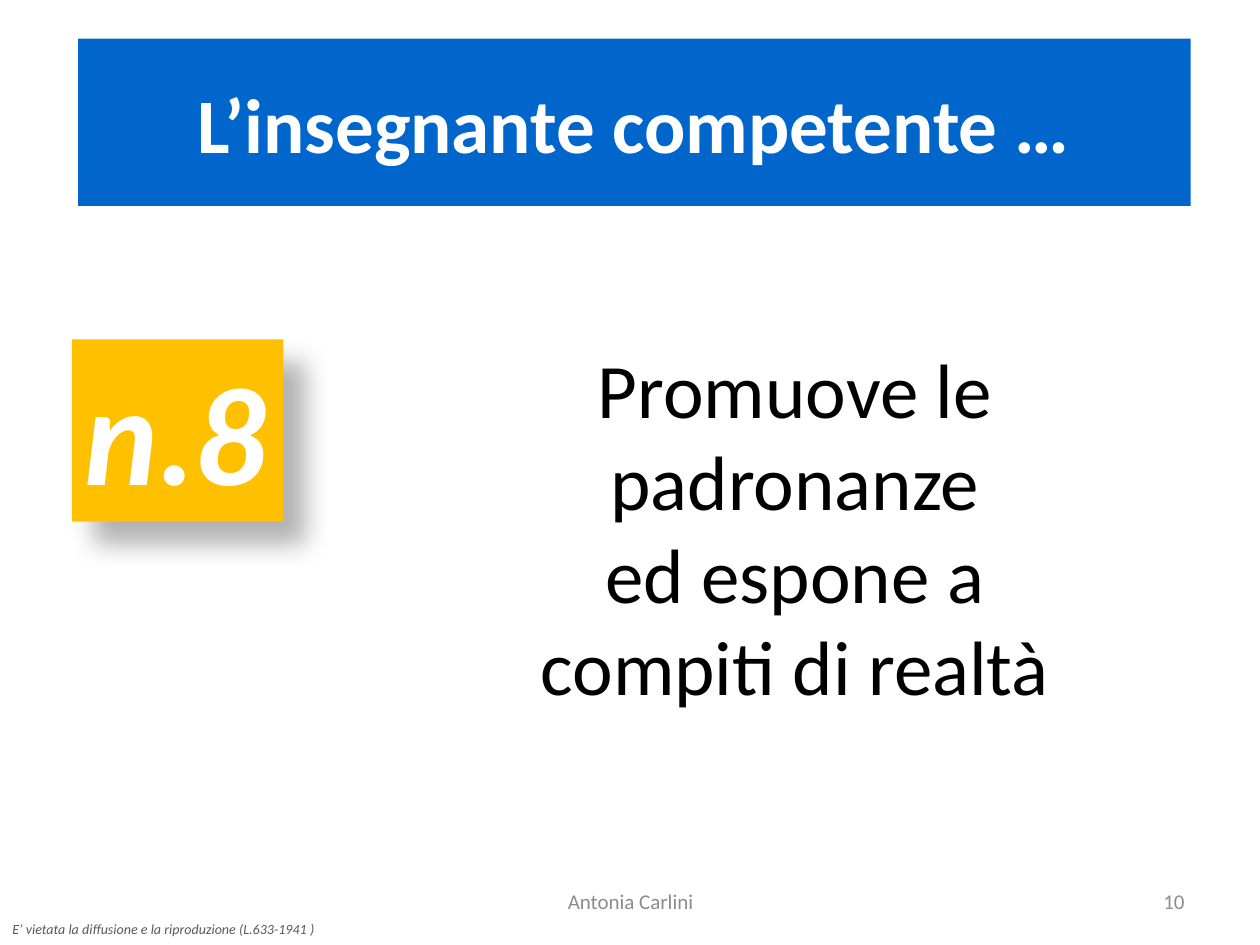
from lxml.etree import SubElement
from pptx import Presentation
from pptx.dml.color import RGBColor
from pptx.enum.shapes import MSO_SHAPE as Form
from pptx.enum.text import MSO_ANCHOR as Anchor, MSO_AUTO_SIZE as Fit, PP_ALIGN as Align
from pptx.oxml.ns import qn
from pptx.util import Inches, Pt

WHITE = RGBColor(0xFF, 0xFF, 0xFF)
BLACK = RGBColor(0x00, 0x00, 0x00)
BLUE = RGBColor(0x00, 0x66, 0xCC)
GOLD = RGBColor(0xFF, 0xC0, 0x00)
GREY = RGBColor(0x8C, 0x8C, 0x8C)
DARK = RGBColor(0x59, 0x59, 0x59)


class Deck:
    font = "Calibri"

    def __init__(self, wide, high):
        self.prs = Presentation()
        self.prs.slide_width = self.wide = Inches(wide)
        self.prs.slide_height = self.high = Inches(high)
        self.slide = self.prs.slides.add_slide(self.prs.slide_layouts[6])

    def area(self, x, y, w, h):
        return (round(x * self.wide / 100), round(y * self.high / 100),
                round(w * self.wide / 100), round(h * self.high / 100))

    def label(self, shape, lines, size, color, align=Align.LEFT, anchor=Anchor.TOP,
              bold=False, italic=False, wrap=True, grow=False):
        frame = shape.text_frame
        frame.word_wrap = wrap
        frame.vertical_anchor = anchor
        frame.auto_size = Fit.SHAPE_TO_FIT_TEXT if grow else Fit.NONE
        for i, line in enumerate(lines):
            para = frame.add_paragraph() if i else frame.paragraphs[0]
            para.alignment = align
            run = para.add_run()
            run.text = line
            font = run.font
            font.name, font.size = self.font, Pt(size)
            font.bold, font.italic = bold, italic
            font.color.rgb = color

    def text(self, area, lines, size, color, **style):
        box = self.slide.shapes.add_textbox(*self.area(*area))
        self.label(box, lines, size, color, **style)

    def block(self, area, fill, lines, size, color, **style):
        rect = self.slide.shapes.add_shape(Form.RECTANGLE, *self.area(*area))
        rect.shadow.inherit = False
        rect.fill.solid()
        rect.fill.fore_color.rgb = fill
        rect.line.fill.background()
        self.label(rect, lines, size, color, **style)
        return rect

    def shade(self, shape, color, alpha, blur, dist, angle):
        effects = shape.element.spPr.find(qn("a:effectLst"))
        outer = SubElement(effects, qn("a:outerShdw"), blurRad=str(Pt(blur)),
                           dist=str(Pt(dist)), dir=str(angle * 60000),
                           algn="tl", rotWithShape="0")
        tint = SubElement(outer, qn("a:srgbClr"), val=str(color))
        SubElement(tint, qn("a:alpha"), val=str(alpha * 1000))

    def save(self):
        self.prs.save("out.pptx")


def main():
    deck = Deck(10, 7.5)
    deck.text((0, 96.8, 26.4, 3.2),
              ["E’ vietata la diffusione e la riproduzione (L.633-1941 )"],
              8, DARK, italic=True, grow=True)
    deck.text((71.7, 92.7, 23.3, 5.3), ["10"], 12, GREY,
              align=Align.RIGHT, anchor=Anchor.MIDDLE)
    deck.text((34.2, 92.7, 31.7, 5.3), ["Antonia Carlini"], 12, GREY,
              align=Align.CENTER, anchor=Anchor.MIDDLE)
    deck.text((32.7, 35.5, 60.8, 40.8),
              ["Promuove le padronanze", "ed espone a", "compiti di realtà"],
              44, BLACK, align=Align.CENTER, grow=True)
    badge = deck.block((5.7, 35.9, 16.8, 19.3), GOLD, ["n.8"], 80, WHITE,
                       bold=True, italic=True, wrap=False, grow=True)
    deck.shade(badge, BLACK, alpha=30, blur=15, dist=18, angle=45)
    deck.block((6.2, 4.1, 88.3, 17.7), BLUE, ["L’insegnante competente …"],
               44, WHITE, align=Align.CENTER, anchor=Anchor.MIDDLE, bold=True)
    deck.save()


if __name__ == "__main__":
    main()
